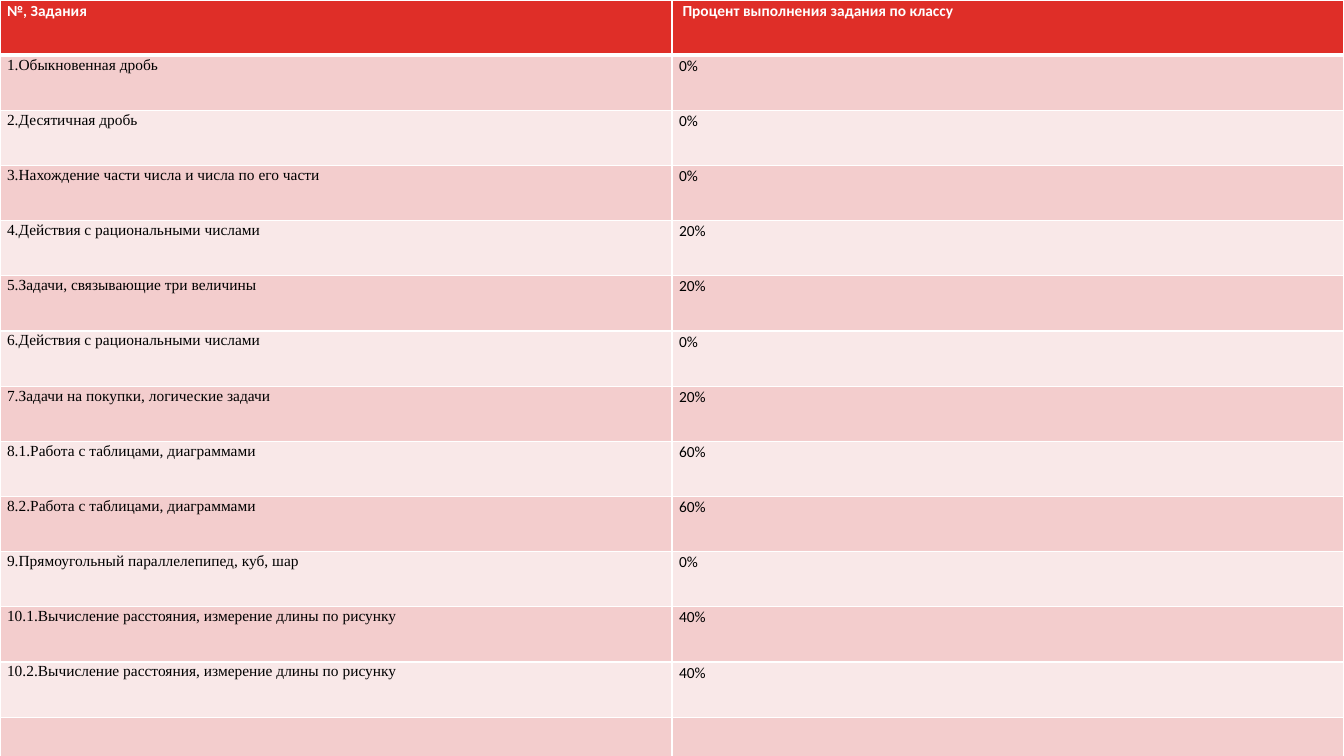
"""Build a slide with a table of task completion rates for a class."""
from lxml import etree
from pptx import Presentation
from pptx.dml.color import RGBColor
from pptx.oxml.ns import qn
from pptx.util import Inches, Pt

SLIDE_WIDTH, SLIDE_HEIGHT = Inches(13.33), Inches(7.5)
ROW_SHARE = 0.073
BLACK = RGBColor(0x00, 0x00, 0x00)
WHITE = RGBColor(0xFF, 0xFF, 0xFF)
RED = RGBColor(0xDF, 0x2E, 0x28)
PINK = RGBColor(0xF3, 0xCD, 0xCD)
PALE_PINK = RGBColor(0xF9, 0xE8, 0xE8)
SANS, SERIF = "Calibri", "Times New Roman"

HEADINGS = ("№, Задания", " Процент выполнения задания по классу")
RESULTS = [
    ("1.Обыкновенная дробь", "0%"),
    ("2.Десятичная дробь", "0%"),
    ("3.Нахождение части числа и числа по его части", "0%"),
    ("4.Действия с рациональными числами", "20%"),
    ("5.Задачи, связывающие три величины", "20%"),
    ("6.Действия с рациональными числами", "0%"),
    ("7.Задачи на покупки, логические задачи", "20%"),
    ("8.1.Работа с таблицами, диаграммами", "60%"),
    ("8.2.Работа с таблицами, диаграммами", "60%"),
    ("9.Прямоугольный параллелепипед, куб, шар", "0%"),
    ("10.1.Вычисление расстояния, измерение длины по рисунку", "40%"),
    ("10.2.Вычисление расстояния, измерение длины по рисунку", "40%"),
    ("", ""),
]


def write_text(frame, text, font=SANS, size=11, color=BLACK, bold=False):
    paragraph = frame.paragraphs[0]
    paragraph.line_spacing = 1.07
    run = paragraph.add_run()
    run.text = text
    run.font.name = font
    run.font.size = Pt(size)
    run.font.bold = bold
    run.font.color.rgb = color


def add_borders(cell, top=1, bottom=1):
    properties = cell._tc.get_or_add_tcPr()
    for side, points in (("L", 1), ("R", 1), ("T", top), ("B", bottom)):
        line = etree.SubElement(properties, qn(f"a:ln{side}"), w=str(Pt(points)))
        fill = etree.SubElement(line, qn("a:solidFill"))
        etree.SubElement(fill, qn("a:srgbClr"), val=str(WHITE))


def style_cell(cell, fill, **borders):
    cell.margin_left = cell.margin_right = Inches(0.07)
    cell.margin_top = cell.margin_bottom = 0
    add_borders(cell, **borders)
    cell.fill.solid()
    cell.fill.fore_color.rgb = fill


def add_results_table(slide):
    row_count = len(RESULTS) + 1
    row_height = int(SLIDE_HEIGHT * ROW_SHARE)
    results = slide.shapes.add_table(
        row_count, len(HEADINGS), 0, 0, SLIDE_WIDTH, row_height * row_count).table
    for row in results.rows:
        row.height = row_height

    for column, heading in enumerate(HEADINGS):
        cell = results.cell(0, column)
        style_cell(cell, RED, bottom=3)
        write_text(cell.text_frame, heading, color=WHITE, bold=True)

    for number, result in enumerate(RESULTS, start=1):
        band = PINK if number % 2 else PALE_PINK
        for column, (text, font) in enumerate(zip(result, (SERIF, SANS))):
            cell = results.cell(number, column)
            style_cell(cell, band, top=3 if number == 1 else 1)
            if text:
                write_text(cell.text_frame, text, font=font)


def main():
    deck = Presentation()
    deck.slide_width, deck.slide_height = SLIDE_WIDTH, SLIDE_HEIGHT
    slide = deck.slides.add_slide(deck.slide_layouts[6])
    slide.background.fill.solid()
    slide.background.fill.fore_color.rgb = BLACK
    add_results_table(slide)
    deck.save("out.pptx")


if __name__ == "__main__":
    main()
